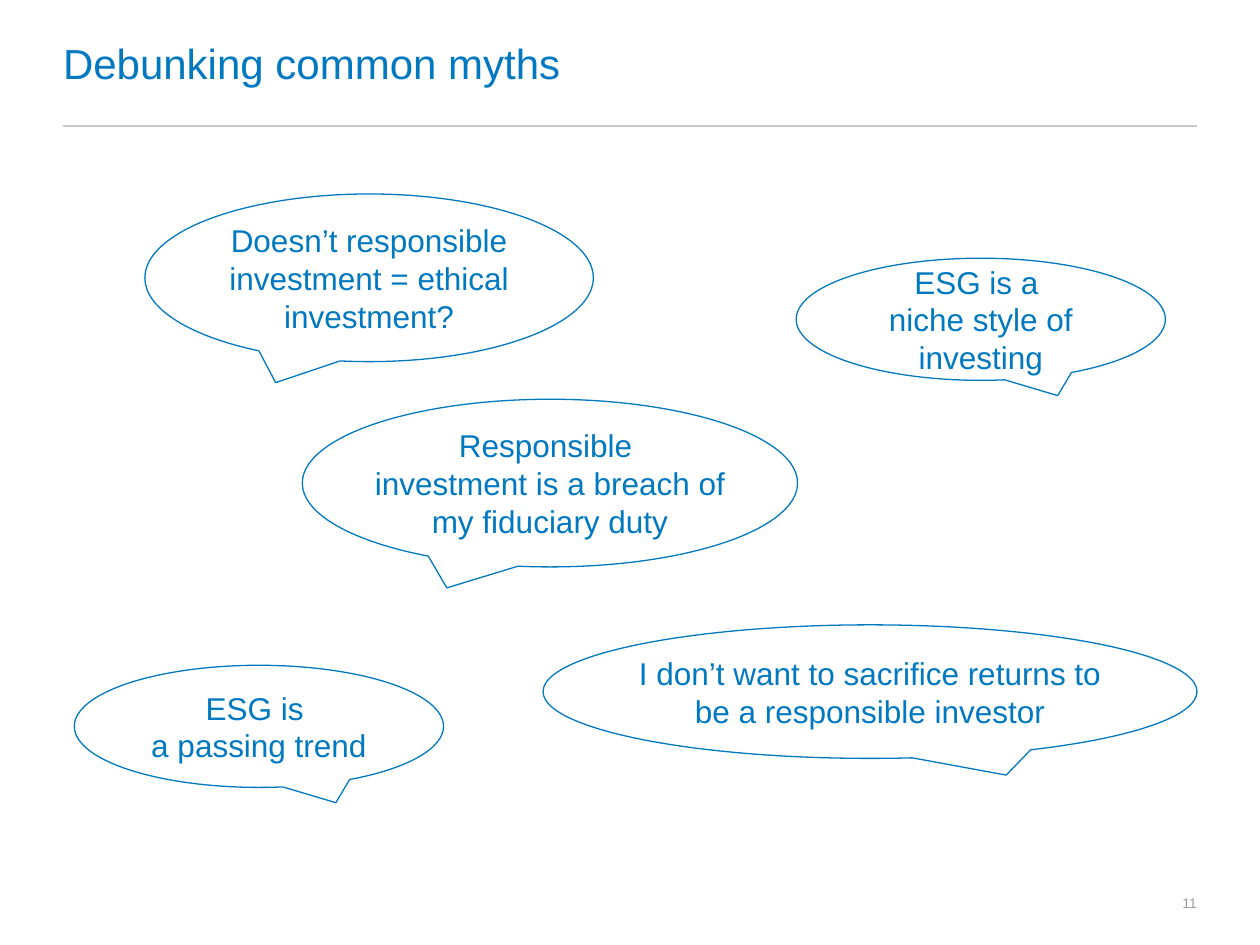
from lxml.etree import SubElement
from pptx import Presentation
from pptx.dml.color import RGBColor
from pptx.enum.shapes import MSO_CONNECTOR as Connector, MSO_SHAPE as Shape
from pptx.enum.text import MSO_ANCHOR as Anchor, MSO_AUTO_SIZE as AutoSize, PP_ALIGN as Align
from pptx.oxml.ns import qn
from pptx.util import Pt

COLORS = {"blue": "0079C1", "rule": "C8C8C8", "number": "9D9D9D"}
FONT = "Arial"
LEFT, RIGHT = -1, 1
MYTHS = [
    ("Doesn’t responsible investment = ethical investment?", (82.8, 110.9, 256.3, 95.8), LEFT),
    ("ESG is a \nniche style of investing", (455, 147.6, 211, 69.8), RIGHT),
    ("Responsible \ninvestment is a breach of my fiduciary duty", (172.8, 228.2, 283, 95.8), LEFT),
    ("I don’t want to sacrifice returns to be a responsible investor", (310.3, 357.1, 373.7, 76.3), RIGHT),
    ("ESG is \na passing trend", (42.5, 380.2, 211, 69.8), RIGHT),
]


def color(name):
    return RGBColor.from_string(COLORS[name])


def write(shape, text, size, color_name, align):
    frame = shape.text_frame
    frame.word_wrap = True
    frame.auto_size = AutoSize.NONE
    frame.vertical_anchor = Anchor.MIDDLE
    frame.margin_left = frame.margin_right = frame.margin_top = frame.margin_bottom = 0
    para = frame.paragraphs[0]
    para.text = text
    para.alignment = align
    para.font.name = FONT
    para.font.size = Pt(size)
    para.font.color.rgb = color(color_name)


def add_header(page, left, top, width, height):
    title = page.shapes.title
    title.left, title.top, title.width, title.height = map(Pt, (left, top, width, height))
    write(title, "Debunking common myths", 24, "blue", Align.LEFT)
    bottom = top + height
    rule = page.shapes.add_connector(
        Connector.STRAIGHT, Pt(left), Pt(bottom), Pt(left + width), Pt(bottom))
    rule.line.color.rgb = color("rule")
    rule.line.width = Pt(0.75)
    SubElement(rule._element.spPr, qn("a:effectLst"))


def add_page_number(page, number, left, top, width, height):
    box = page.shapes.add_textbox(*map(Pt, (left, top, width, height)))
    write(box, str(number), 8, "number", Align.RIGHT)


def add_myth(page, text, bounds, tail_side):
    bubble = page.shapes.add_shape(Shape.OVAL_CALLOUT, *map(Pt, bounds))
    bubble.adjustments[0] = tail_side * 0.20833
    bubble.adjustments[1] = 0.625
    bubble.shadow.inherit = False
    bubble.fill.background()
    bubble.line.color.rgb = color("blue")
    bubble.line.width = Pt(0.75)
    write(bubble, text, 18, "blue", Align.CENTER)


def main():
    deck = Presentation()
    deck.slide_width, deck.slide_height = Pt(720), Pt(540)
    page = deck.slides.add_slide(deck.slide_layouts[5])
    add_header(page, 36, 0, 648, 72)
    add_page_number(page, 11, 648, 492.5, 36, 46.8)
    for text, bounds, tail_side in MYTHS:
        add_myth(page, text, bounds, tail_side)
    deck.save("out.pptx")


if __name__ == "__main__":
    main()
